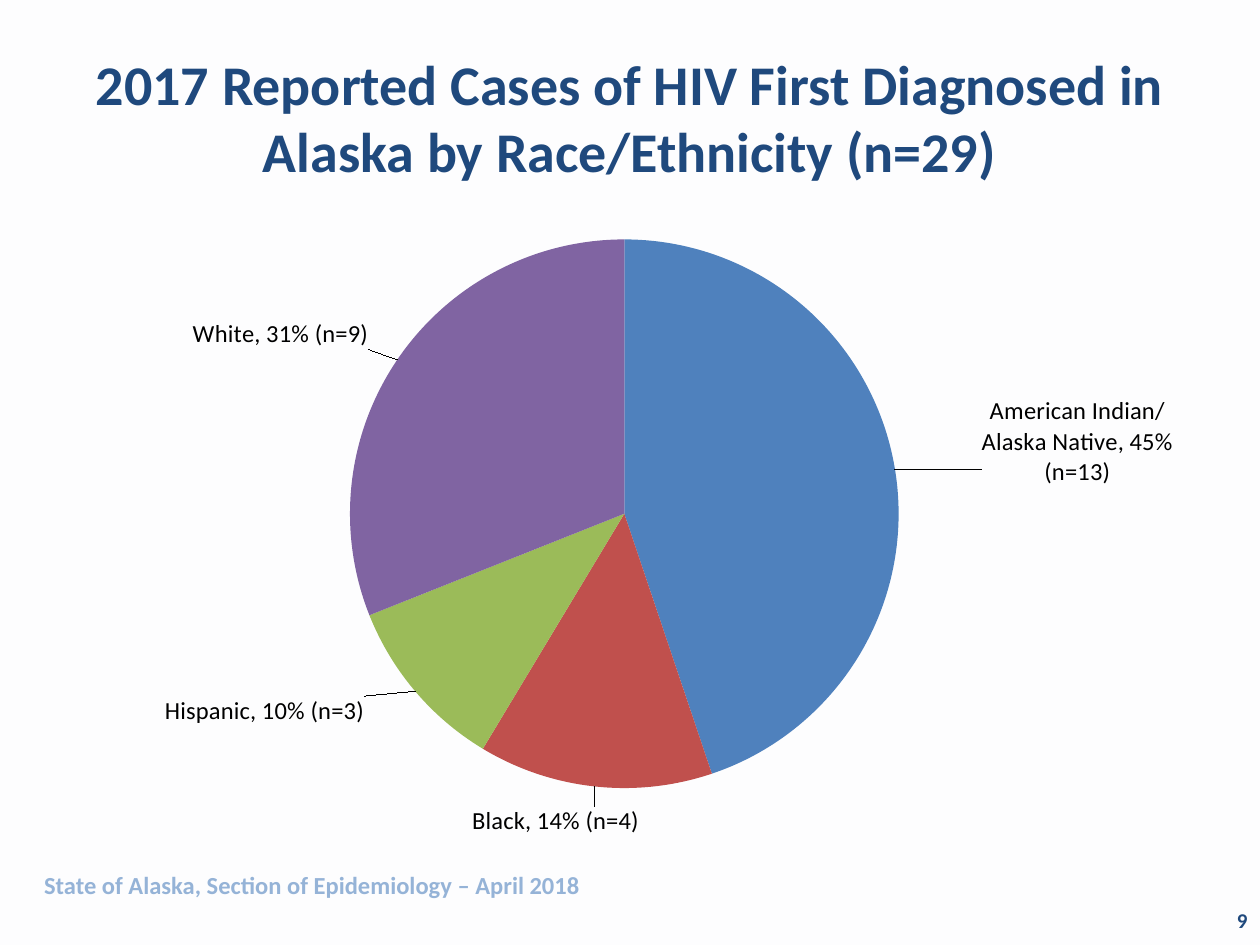
from lxml import etree
from pptx import Presentation
from pptx import util as u
from pptx.chart import data
from pptx.dml import color
from pptx.enum import chart as ch, text
from pptx.oxml import ns

NAVY, PALE, BLACK, BACK = "1F497D", "95B3D7", "000000", "FDFDFE"
# group, cases, share, fill, label shift as parts of the chart size
ROWS = [
    ("American Indian/\nAlaska Native", 13, 45, "4F81BD", (0.07, 0.03)),
    ("Black", 4, 14, "C0504D", (0.04, 0.02)),
    ("Hispanic", 3, 10, "9BBB59", (-0.04, 0)),
    ("White", 9, 31, "8064A2", (-0.02, -0.01)),
]
PLOT = {"x": 0.25, "y": 0.03, "w": 0.49, "h": 0.88}


def rgb(code):
    return color.RGBColor.from_string(code)


def layout(**vals):
    """Make a manual chart layout; the plot area also has a size."""
    root = etree.Element(ns.qn("c:layout"))
    man = etree.SubElement(root, ns.qn("c:manualLayout"))

    def add(tag, val):
        etree.SubElement(man, ns.qn("c:" + tag)).set("val", str(val))

    if "w" in vals:
        add("layoutTarget", "inner")
        add("xMode", "edge")
        add("yMode", "edge")
    for tag, val in vals.items():
        add(tag, val)
    return root


class Deck:
    font = "Calibri"

    def __init__(self):
        self.prs = Presentation()
        self.prs.slide_width, self.prs.slide_height = u.Cm(25.4), u.Cm(19.05)
        self.slide = self.prs.slides.add_slide(self.prs.slide_layouts[5])
        fill = self.slide.background.fill
        fill.solid()
        fill.fore_color.rgb = rgb(BACK)

    def style(self, font, size, code, bold=False):
        font.name, font.size, font.bold = self.font, u.Pt(size), bold
        font.color.rgb = rgb(code)

    def place(self, shape, box):
        shape.left, shape.top, shape.width, shape.height = map(u.Cm, box)

    def put(self, shape, words, size, code, align, anchor):
        frame = shape.text_frame
        frame.word_wrap = True
        frame.auto_size = text.MSO_AUTO_SIZE.NONE
        frame.vertical_anchor = anchor
        para = frame.paragraphs[0]
        para.alignment = align
        run = para.add_run()
        run.text = words
        self.style(run.font, size, code, True)

    def title(self, words, box):
        shape = self.slide.shapes.title
        self.place(shape, box)
        self.put(shape, words, 32, NAVY, text.PP_ALIGN.CENTER,
                 text.MSO_ANCHOR.MIDDLE)

    def note(self, words, box, size, code, align, anchor):
        shape = self.slide.shapes.add_textbox(*map(u.Cm, box))
        self.put(shape, words, size, code, align, anchor)

    def label(self, point, words, shift):
        tag = point.data_label
        frame = tag.text_frame
        for num, line in enumerate(words.split("\n")):
            para = frame.add_paragraph() if num else frame.paragraphs[0]
            run = para.add_run()
            run.text = line
            self.style(run.font, 14, BLACK)
        tag.position = ch.XL_LABEL_POSITION.OUTSIDE_END
        return layout(x=shift[0], y=shift[1])

    def pie(self, rows, box):
        info = data.CategoryChartData()
        info.categories = [row[0] for row in rows]
        info.add_series("Series 1", [row[1] for row in rows])
        chart = self.slide.shapes.add_chart(
            ch.XL_CHART_TYPE.PIE, *map(u.Cm, box), info).chart
        chart.has_legend = chart.has_title = False
        self.style(chart.font, 18, BLACK)
        plot = chart.plots[0]
        plot.vary_by_categories = True
        series = plot.series[0]

        # Shared label settings
        tags = series.data_labels
        tags.show_value = tags.show_percentage = tags.show_category_name = True
        tags.position = ch.XL_LABEL_POSITION.OUTSIDE_END
        self.style(tags.font, 14, BLACK)

        # Slices and their moved labels
        moves = []
        for num, (name, count, share, code, shift) in enumerate(rows):
            point = series.points[num]
            point.format.fill.solid()
            point.format.fill.fore_color.rgb = rgb(code)
            words = f"{name}, {share}% (n={count})"
            moves.append(self.label(point, words, shift))
        space = chart.element
        for tag, move in zip(space.findall(".//" + ns.qn("c:dLbl")), moves):
            tag.find(ns.qn("c:idx")).addnext(move)

        # Place of the pie inside the chart
        area = space.find(".//" + ns.qn("c:plotArea"))
        old = area.find(ns.qn("c:layout"))
        if old is not None:
            area.remove(old)
        area.insert(0, layout(**PLOT))


def main():
    deck = Deck()
    # Title
    deck.title("2017 Reported Cases of HIV First Diagnosed in "
               "Alaska by Race/Ethnicity (n=29)", (1.27, 0.76, 22.86, 3.18))
    # Chart
    deck.pie(ROWS, (1.27, 4.45, 22.86, 12.57))
    # Page number and source
    deck.note("9", (19.48, 18.03, 5.92, 1.02), 12, NAVY,
              text.PP_ALIGN.RIGHT, text.MSO_ANCHOR.MIDDLE)
    deck.note("State of Alaska, Section of Epidemiology – April 2018",
              (0.64, 17.42, 18.62, 0.86), 14, PALE,
              text.PP_ALIGN.LEFT, text.MSO_ANCHOR.TOP)
    deck.prs.save("out.pptx")


if __name__ == "__main__":
    main()
